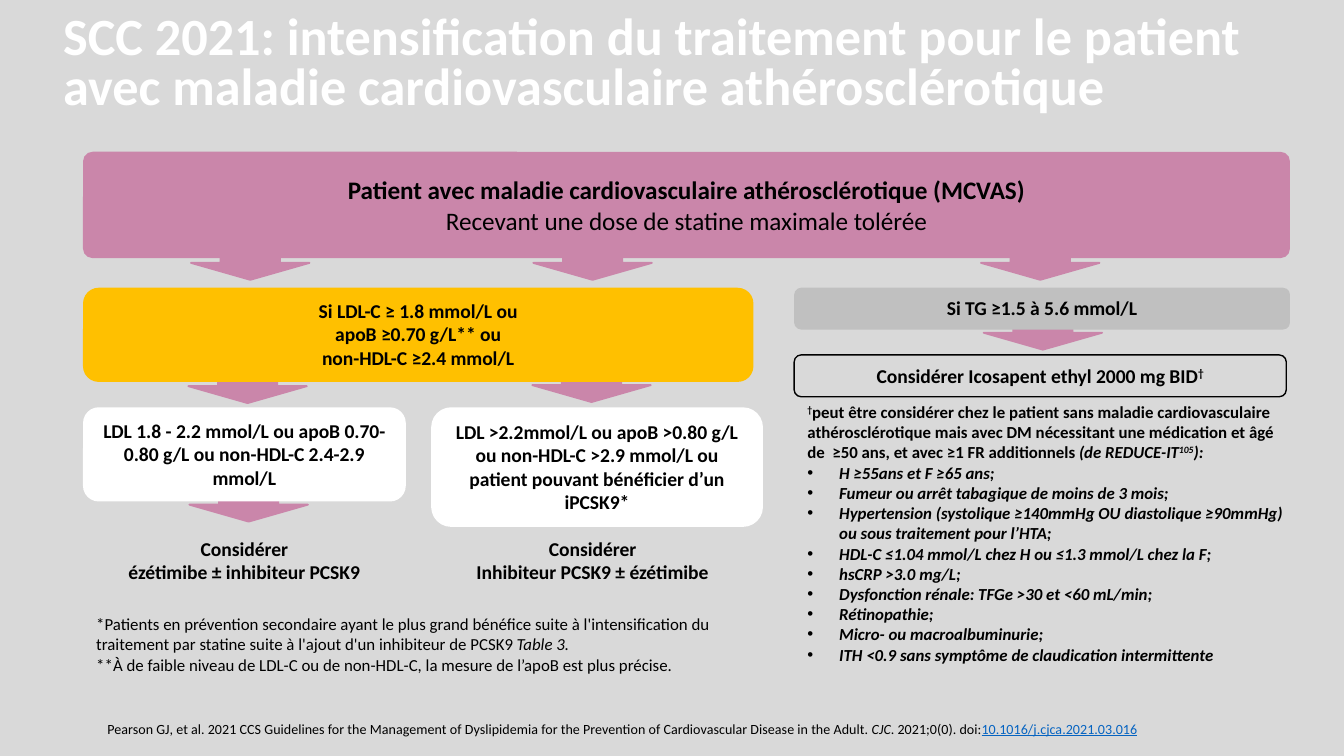
import pptx
import pptx.util
import pptx.dml.color
import pptx.enum.shapes
import pptx.enum.text
import pptx.oxml
import pptx.oxml.ns
from dataclasses import dataclass

Cm, Pt = pptx.util.Cm, pptx.util.Pt
Align, Anchor = pptx.enum.text.PP_ALIGN, pptx.enum.text.MSO_ANCHOR
Shape = pptx.enum.shapes.MSO_SHAPE


@dataclass(frozen=True)
class Theme:
    font: str = "Calibri"
    background: str = "D9D9D9"
    pink: str = "CA86AA"
    amber: str = "FFC000"
    grey: str = "C0C0C0"
    white: str = "FFFFFF"
    black: str = "000000"
    link: str = "0563C1"
    title: float = 28
    lead: float = 13.5
    box: float = 10.5
    note: float = 9
    reference: float = 7.5


T = Theme()

# Runs are (text, style); style letters: b bold, i italic, s superscript, l link look.
TITLE = [[("SCC 2021: intensification du traitement pour le patient "
           "avec maladie cardiovasculaire athérosclérotique", "b")]]
PATIENT = [[("Patient avec maladie cardiovasculaire athérosclérotique (MCVAS)", "b")],
           [("Recevant une dose de statine maximale tolérée", "")]]
LDL = [[("Si LDL-C ≥ 1.8 mmol/L ou", "b")],
       [("apoB ≥0.70 g/L** ou", "b")],
       [("non-HDL-C ≥2.4 mmol/L", "b")]]
TG = [[("Si TG ≥1.5 à 5.6 mmol/L", "b")]]
ICOSAPENT = [[("Considérer Icosapent ethyl 2000 mg BID", "b"), ("†", "bs")]]
LDL_MODERATE = [[("LDL 1.8 - 2.2 mmol/L ou apoB 0.70-0.80 g/L "
                  "ou non-HDL-C 2.4-2.9 mmol/L", "b")]]
LDL_HIGH = [[("LDL >2.2mmol/L ou apoB >0.80 g/L ou non-HDL-C >2.9 mmol/L "
              "ou patient pouvant bénéficier d’un iPCSK9*", "b")]]
EZETIMIBE = [[("Considérer", "b")], [("ézétimibe ± inhibiteur PCSK9", "b")]]
PCSK9 = [[("Considérer", "b")], [("Inhibiteur PCSK9 ± ézétimibe", "b")]]
FOOTNOTES = [
    [("*Patients en prévention secondaire ayant le plus grand bénéfice suite à "
      "l'intensification du traitement par statine suite à l'ajout d'un "
      "inhibiteur de PCSK9 ", ""), ("Table 3.", "i")],
    [("**À de faible niveau de LDL-C ou de non-HDL-C, la mesure de l’apoB "
      "est plus précise.", "")],
]
CRITERIA_INTRO = [
    ("†", "bs"),
    ("peut être considérer chez le patient sans maladie cardiovasculaire "
     "athérosclérotique mais avec DM nécessitant une médication et âgé de  ≥50 ans, "
     "et avec ≥1 FR additionnels ", "b"),
    ("(de REDUCE-IT", "bi"), ("105", "bis"), ("):", "bi"),
]
CRITERIA = [
    "H ≥55ans et F ≥65 ans;",
    "Fumeur ou arrêt tabagique de moins de 3 mois;",
    "Hypertension (systolique ≥140mmHg OU diastolique ≥90mmHg) "
    "ou sous traitement pour l’HTA;",
    "HDL-C ≤1.04 mmol/L chez H ou ≤1.3 mmol/L chez la F;",
    "hsCRP >3.0 mg/L;",
    "Dysfonction rénale: TFGe >30 et <60 mL/min;",
    "Rétinopathie;",
    "Micro- ou macroalbuminurie;",
    "ITH <0.9 sans symptôme de claudication intermittente",
]
REFERENCE = [[
    ("Pearson GJ, et al. 2021 CCS Guidelines for the Management of Dyslipidemia for "
     "the Prevention of Cardiovascular Disease in the Adult. ", ""),
    ("CJC", "i"), (". 2021;0(0). doi:", ""), ("10.1016/j.cjca.2021.03.016", "l"),
]]

# Column lefts and row tops, in centimetres
COL_A, COL_B, COL_C = 1.57, 8.15, 15.01
ROW_PATIENT, ROW_TEST, ROW_LEVEL, ROW_ACTION = 2.87, 5.44, 7.7, 9.96
BRANCH_W, ACTION_H, THIN_H = 6.1, 1.27, 0.79
ARROW_W, ARROW_H = 2.24, 0.64

# left, top, width, height, fill, line, paragraphs
BOXES = [
    (COL_A, ROW_LEVEL, BRANCH_W, 1.78, T.white, None, LDL_MODERATE),
    (COL_B, ROW_LEVEL, 6.27, 2.26, T.white, None, LDL_HIGH),
    (COL_A, ROW_ACTION, BRANCH_W, ACTION_H, None, None, EZETIMIBE),
    (COL_B, ROW_ACTION, BRANCH_W, ACTION_H, None, None, PCSK9),
    (COL_A, ROW_TEST, 12.67, 1.78, T.amber, None, LDL),
    (COL_C, ROW_TEST, 9.37, THIN_H, T.grey, None, TG),
    (COL_C, 6.71, 9.3, THIN_H, None, T.black, ICOSAPENT),
]
ARROWS = [(3.61, 4.65), (10.08, 4.65), (18.54, 4.65), (18.59, 5.97),
          (3.56, 6.98), (10.06, 6.96), (3.58, 9.22)]


def rgb(value):
    return pptx.dml.color.RGBColor.from_string(value)


def write(tf, paragraphs, size, color=T.black, align=Align.LEFT,
          anchor=Anchor.TOP, grow=True):
    auto = pptx.enum.text.MSO_AUTO_SIZE
    tf.word_wrap = True
    tf.auto_size = auto.SHAPE_TO_FIT_TEXT if grow else auto.NONE
    tf.vertical_anchor = anchor
    for i, runs in enumerate(paragraphs):
        p = tf.paragraphs[0] if i == 0 else tf.add_paragraph()
        p.alignment = align
        for text, style in runs:
            r = p.add_run()
            r.text = text
            font = r.font
            font.name, font.size = T.font, Pt(size)
            font.bold, font.italic = "b" in style, "i" in style
            font.color.rgb = rgb(T.link if "l" in style else color)
            if "l" in style:
                font.underline = True
            if "s" in style:
                r._r.get_or_add_rPr().set("baseline", "30000")


def add_preset(slide, preset, at, fill=None, line=None, weight=1):
    sp = slide.shapes.add_shape(preset, *map(Cm, at))
    sp.shadow.inherit = False
    if fill:
        sp.fill.solid()
        sp.fill.fore_color.rgb = rgb(fill)
    else:
        sp.fill.background()
    if line:
        sp.line.color.rgb = rgb(line)
        sp.line.width = Pt(weight)
    else:
        sp.line.fill.background()
    return sp


def add_text(slide, at, paragraphs, size):
    tf = slide.shapes.add_textbox(*map(Cm, at)).text_frame
    write(tf, paragraphs, size)
    return tf


def add_bullet(p):
    pPr = p._p.get_or_add_pPr()
    pPr.set("marL", str(Cm(0.6)))
    pPr.set("indent", str(-Cm(0.6)))
    ns = pptx.oxml.ns.nsdecls("a")
    for xml in (f'<a:buFont {ns} typeface="Arial"/>', f'<a:buChar {ns} char="•"/>'):
        pPr.append(pptx.oxml.parse_xml(xml))


def add_text_shadow(r):
    ns = pptx.oxml.ns.nsdecls("a")
    effect = pptx.oxml.parse_xml(
        f'<a:effectLst {ns}><a:outerShdw blurRad="38100" dist="38100" dir="2700000">'
        f'<a:srgbClr val="{T.black}"><a:alpha val="43000"/></a:srgbClr>'
        '</a:outerShdw></a:effectLst>')
    r._r.get_or_add_rPr().find(pptx.oxml.ns.qn("a:solidFill")).addnext(effect)


def main():
    prs = pptx.Presentation()
    prs.slide_width, prs.slide_height = Cm(25.4), Cm(14.29)
    s = prs.slides.add_slide(prs.slide_layouts.get_by_name("Title Only"))
    s.background.fill.solid()
    s.background.fill.fore_color.rgb = rgb(T.background)

    title = s.shapes.title
    title.left, title.top, title.width, title.height = map(Cm, (0.94, 0.15, 23.22, 2.18))
    write(title.text_frame, TITLE, T.title, T.white, anchor=Anchor.MIDDLE)
    p = title.text_frame.paragraphs[0]
    p.line_spacing = 0.8
    add_text_shadow(p.runs[0])

    for left, top in ARROWS:
        add_preset(s, Shape.DOWN_ARROW, (left, top, ARROW_W, ARROW_H), T.pink, T.pink)

    sp = add_preset(s, Shape.ROUNDED_RECTANGLE, (COL_A, ROW_PATIENT, 22.81, 2.01), T.pink)
    sp.adjustments[0] = 0.09
    write(sp.text_frame, PATIENT, T.lead, align=Align.CENTER,
          anchor=Anchor.MIDDLE, grow=False)

    for *at, fill, line, paragraphs in BOXES:
        sp = add_preset(s, Shape.ROUNDED_RECTANGLE, at, fill, line, 0.75)
        write(sp.text_frame, paragraphs, T.box, align=Align.CENTER)

    criteria = [CRITERIA_INTRO] + [[(text, "bi")] for text in CRITERIA]
    tf = add_text(s, (COL_C, 7.47, 9.65, 5.26), criteria, T.note)
    for p in tf.paragraphs[1:]:
        add_bullet(p)
    add_text(s, (COL_A, 11.48, 13.06, 1.42), FOOTNOTES, T.note)
    add_text(s, (1.78, 13.49, 21.13, 0.89), REFERENCE, T.reference)

    prs.save("out.pptx")


if __name__ == "__main__":
    main()
